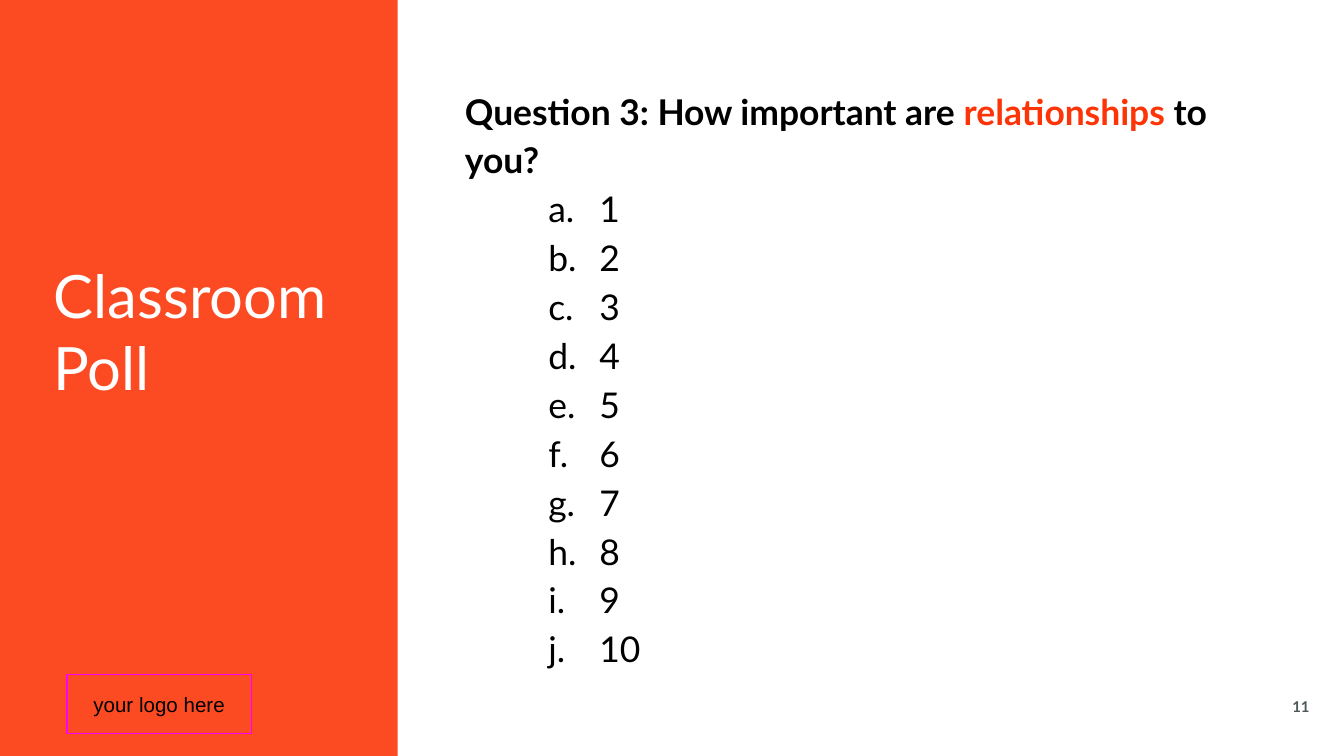
from lxml import etree
from pptx import Presentation
from pptx.dml.color import RGBColor
from pptx.enum import shapes, text
from pptx.oxml import ns
from pptx.util import Inches, Pt

WIDTH, HEIGHT = 10, 10 * 9 / 16
COLOURS = {
    "accent": "FC3407",
    "ink": "000000",
    "paper": "FFFFFF",
    "number": "4F5859",
    "frame": "FF00FF",
}


class PollSlide:
    font = "Lato"

    def __init__(self, slide):
        self.slide = slide

    def colour(self, name):
        return RGBColor.from_string(COLOURS[name])

    def style(self, font, size, colour, bold=False, name=None):
        font.name = name or self.font
        font.size = Pt(size)
        font.bold = bold
        font.color.rgb = self.colour(colour)

    def frame(self, shape, insets, anchor):
        frame = shape.text_frame
        frame.word_wrap = True
        frame.vertical_anchor = anchor
        (frame.margin_left, frame.margin_top,
         frame.margin_right, frame.margin_bottom) = map(Inches, insets)
        return frame

    def textbox(self, place, anchor=text.MSO_ANCHOR.TOP):
        box = self.slide.shapes.add_textbox(*map(Inches, place))
        return self.frame(box, (0, 0, 0, 0), anchor)

    def rectangle(self, place, insets, fill=None, opacity=100, line=None):
        shape = self.slide.shapes.add_shape(
            shapes.MSO_SHAPE.RECTANGLE, *map(Inches, place))
        shape.shadow.inherit = False
        if fill:
            shape.fill.solid()
            shape.fill.fore_color.rgb = self.colour(fill)
            tint = shape.fill._xPr.find(".//" + ns.qn("a:srgbClr"))
            etree.SubElement(tint, ns.qn("a:alpha"), val=str(opacity * 1000))
        else:
            shape.fill.background()
        if line:
            shape.line.color.rgb = self.colour(line)
            shape.line.width = Pt(0.75)
        else:
            shape.line.fill.background()
        return self.frame(shape, insets, text.MSO_ANCHOR.MIDDLE)

    def label(self, frame, words, size, colour, align, bold=False, name=None):
        paragraph = frame.paragraphs[0]
        paragraph.text = words
        paragraph.alignment = align
        self.style(paragraph.font, size, colour, bold, name)

    def question(self, frame, parts, size):
        paragraph = frame.paragraphs[0]
        paragraph.line_spacing = 1.15
        self.style(paragraph.font, size, "ink", bold=True)
        for words, colour in parts:
            run = paragraph.add_run()
            run.text = words
            run.font.color.rgb = self.colour(colour)

    def answer(self, frame, words, size):
        paragraph = frame.add_paragraph()
        paragraph.text = words
        paragraph.level = 1
        paragraph.line_spacing = 1.15
        properties = paragraph._p.get_or_add_pPr()
        properties.set("marL", str(Inches(1)))
        properties.set("indent", str(Inches(-0.38)))
        tint = etree.SubElement(properties, ns.qn("a:buClr"))
        etree.SubElement(tint, ns.qn("a:srgbClr"), val=COLOURS["ink"])
        etree.SubElement(properties, ns.qn("a:buAutoNum"), type="alphaLcPeriod")
        self.style(paragraph.font, size, "ink")


def main():
    deck = Presentation()
    deck.slide_width, deck.slide_height = Inches(WIDTH), Inches(HEIGHT)
    poll = PollSlide(deck.slides.add_slide(deck.slide_layouts[6]))
    left, centre = text.PP_ALIGN.LEFT, text.PP_ALIGN.CENTER

    ballot = poll.textbox((3.46, 0.62, 5.54, 3.63))
    poll.question(ballot, [
        ("Question 3: How important are ", "ink"),
        ("relationships", "accent"),
        (" to you?", "ink"),
    ], 19)
    for rating in range(1, 11):
        poll.answer(ballot, str(rating), 19)

    heading = poll.rectangle((0, 0, 2.96, HEIGHT), (0.4, 0.4, 0.4, 1.1),
                             fill="accent", opacity=89)
    poll.label(heading, "Classroom Poll", 32, "paper", left)

    page_number = poll.textbox((9.51, 5.14, 0.34, 0.24), text.MSO_ANCHOR.MIDDLE)
    poll.label(page_number, "11", 8, "number", centre, bold=True)

    logo_spot = poll.rectangle((0.5, 5.02, 1.37, 0.44), (0.1, 0.1, 0.1, 0.1),
                               line="frame")
    poll.label(logo_spot, "your logo here", 11, "ink", centre, name="Arial")

    deck.save("out.pptx")


if __name__ == "__main__":
    main()
